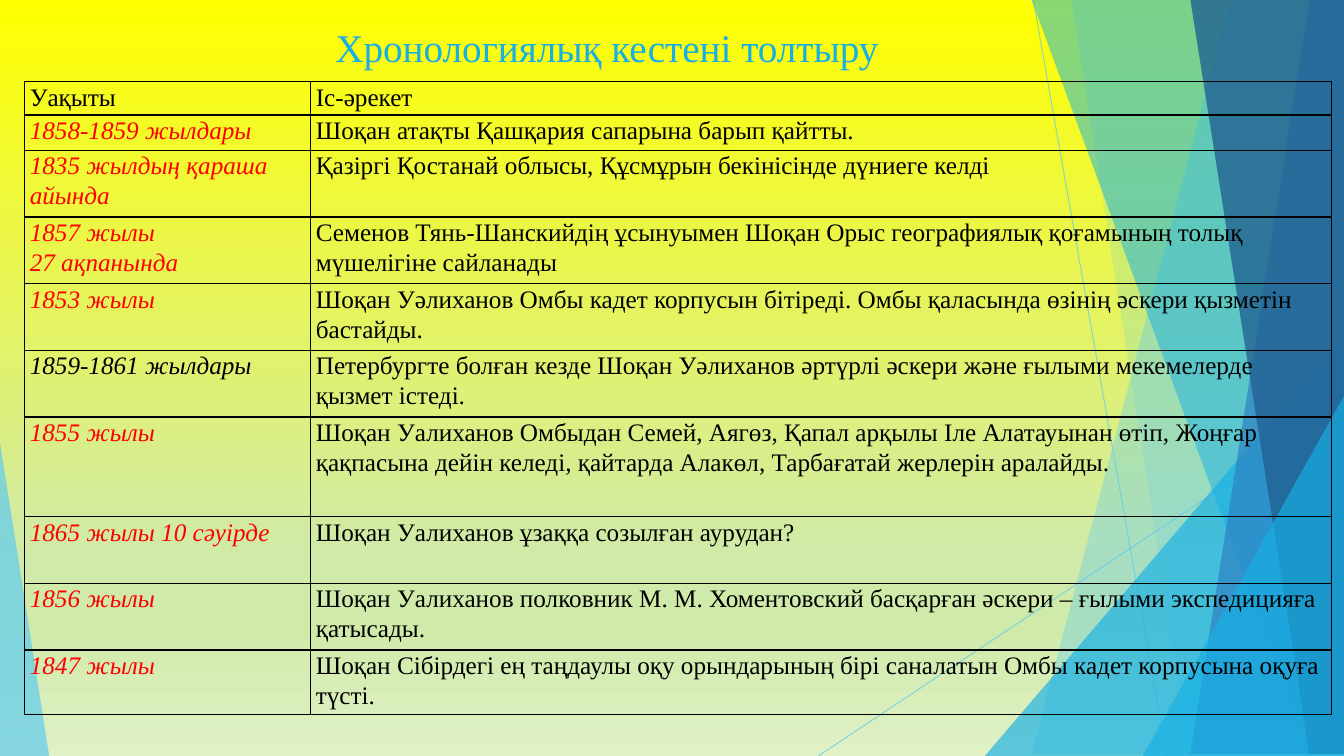
"""Build a chronology table slide over a faceted gradient background."""
from lxml import etree
from pptx import Presentation
from pptx import util as u
from pptx.dml.color import RGBColor
from pptx.enum import shapes, text
from pptx.oxml.ns import qn

COLORS = {
    "yellow": "FFFF00", "lime": "D0EAAA", "pale": "E0F1C6",
    "sky": "5FCBEF", "cyan": "17B0E4", "blue": "2E83C3", "navy": "226292",
    "black": "000000", "red": "FF0000",
}
FONT = "Times New Roman"
WIDTH, HEIGHT = 33.87, 19.05


def add_color(parent, name, alpha=100):
    """Append a colour, with its opacity in percent, to an XML fill or stop."""
    color = etree.SubElement(parent, qn("a:srgbClr"), val=COLORS[name])
    if alpha < 100:
        etree.SubElement(color, qn("a:alpha"), val=str(alpha * 1000))


def style_font(font, size, name, italic=False):
    """Set the face, size, colour and slant of a font."""
    font.name, font.size, font.italic = FONT, u.Pt(size), italic
    font.color.rgb = RGBColor.from_string(COLORS[name])


deck = Presentation()
deck.slide_width, deck.slide_height = u.Cm(WIDTH), u.Cm(HEIGHT)
page = deck.slides.add_slide(deck.slide_layouts[6])

backdrop = page.background.fill
backdrop.gradient()
backdrop.gradient_angle = 270
stops = page.element.find(".//" + qn("a:gsLst"))
for stop in list(stops):
    stops.remove(stop)
for position, name in [(0, "yellow"), (74, "lime"), (83, "lime"), (100, "pale")]:
    add_color(etree.SubElement(stops, qn("a:gs"), pos=str(position * 1000)), name)

for ends in [(26.04, 0, 29.41, HEIGHT), (WIDTH, 10.24, 20.62, HEIGHT)]:
    ray = page.shapes.add_connector(shapes.MSO_CONNECTOR.STRAIGHT, *map(u.Cm, ends))
    ray.line.width = u.Pt(0.75)
    ray.line.fill.solid()
    fill = ray.line.fill
    fill.fore_color.rgb = RGBColor.from_string(COLORS["sky"])
    solid = ray.element.spPr.find(".//" + qn("a:solidFill"))
    solid.clear()
    add_color(solid, "sky", 70)
    etree.SubElement(ray.element.spPr, qn("a:effectLst"))

# Panels give top and bottom x; triangles give left, top, width and apex.
facets = [
    ("panel", (31.19, 25.5), "sky", 36),
    ("panel", (26.67, 30.05), "sky", 20),
    ("triangle", (24.82, 8.46, 9.05, 1), "cyan", 66),
    ("panel", (25.93, 32.79), "cyan", 50),
    ("panel", (33.1, 30.28), "blue", 70),
    ("panel", (30.38, 33.48), "navy", 80),
    ("triangle", (28.8, 9.98, 5.07, 1), "cyan", 66),
    ("triangle", (0, 11.15, 1.24, 0), "sky", 70),
]
for kind, geometry, name, alpha in facets:
    if kind == "panel":
        top_x, bottom_x = geometry
        outline = page.shapes.build_freeform(top_x, 0, scale=u.Cm(1))
        outline.add_line_segments([(WIDTH, 0), (WIDTH, HEIGHT), (bottom_x, HEIGHT)])
        facet = outline.convert_to_shape()
    else:
        left, top, width, apex = geometry
        facet = page.shapes.add_shape(
            shapes.MSO_SHAPE.ISOSCELES_TRIANGLE,
            u.Cm(left), u.Cm(top), u.Cm(width), u.Cm(HEIGHT - top))
        facet.adjustments[0] = apex
    facet.shadow.inherit = False
    facet.line.fill.background()
    facet.fill.solid()
    facet.fill.fore_color.rgb = RGBColor.from_string(COLORS[name])
    solid = facet.element.spPr.find(qn("a:solidFill"))
    solid.clear()
    add_color(solid, name, alpha)

box = page.shapes.add_textbox(u.Cm(8.2), u.Cm(0.46), u.Cm(16.94), u.Cm(2.24))
box.text_frame.word_wrap = True
para = box.text_frame.paragraphs[0]
para.text = "Хронологиялық кестені толтыру"
style_font(para.font, 28, "cyan")

events = [
    ("Уақыты", "Іс-әрекет", 0.84),
    ("1858-1859 жылдары", "Шоқан атақты Қашқария сапарына барып қайтты.", 0.89),
    ("1835 жылдың қараша айында",
     "Қазіргі Қостанай облысы, Құсмұрын бекінісінде дүниеге келді", 1.68),
    ("1857 жылы\n27 ақпанында",
     "Семенов Тянь-Шанскийдің ұсынуымен Шоқан Орыс географиялық қоғамының толық "
     "мүшелігіне сайланады", 1.68),
    ("1853 жылы",
     "Шоқан Уәлиханов Омбы кадет корпусын бітіреді. Омбы қаласында өзінің әскери "
     "қызметін бастайды.", 1.68),
    ("1859-1861 жылдары",
     "Петербургте болған кезде Шоқан Уәлиханов әртүрлі әскери және ғылыми "
     "мекемелерде қызмет істеді.", 1.68),
    ("1855 жылы",
     "Шоқан Уалиханов Омбыдан Семей, Аягөз, Қапал арқылы Іле Алатауынан өтіп, "
     "Жоңғар қақпасына дейін келеді, қайтарда Алакөл, Тарбағатай жерлерін "
     "аралайды.", 2.51),
    ("1865 жылы 10 сәуірде", "Шоқан Уалиханов ұзаққа созылған аурудан?", 1.68),
    ("1856 жылы",
     "Шоқан Уалиханов полковник М. М. Хоментовский басқарған әскери – ғылыми "
     "экспедицияға қатысады.", 1.68),
    ("1847 жылы",
     "Шоқан Сібірдегі ең таңдаулы оқу орындарының бірі саналатын Омбы кадет "
     "корпусына оқуға түсті.", 1.52),
]
table = page.shapes.add_table(
    len(events), 2, u.Cm(0.62), u.Cm(2.06), u.Cm(32.94), u.Cm(15.84)).table
table.first_row = table.horz_banding = False
for column, width in zip(table.columns, (7.21, 25.73)):
    column.width = u.Cm(width)

for row, (date, event, height) in enumerate(events):
    table.rows[row].height = u.Cm(height)
    for column, wording in enumerate((date, event)):
        cell = table.cell(row, column)
        cell.text = wording
        cell.margin_left = cell.margin_right = u.Cm(0.13)
        cell.margin_top = cell.margin_bottom = 0
        cell.vertical_anchor = text.MSO_ANCHOR.TOP
        is_date = row > 0 and column == 0
        is_red = is_date and date != "1859-1861 жылдары"
        for para in cell.text_frame.paragraphs:
            para.line_spacing = 1.07
            style_font(para.font, 18, "red" if is_red else "black", is_date)
        properties = cell._tc.get_or_add_tcPr()
        for side in ("lnL", "lnR", "lnT", "lnB"):
            border = etree.SubElement(properties, qn("a:" + side), w=str(u.Pt(1)))
            add_color(etree.SubElement(border, qn("a:solidFill")), "black")
        cell.fill.background()

deck.save("out.pptx")
